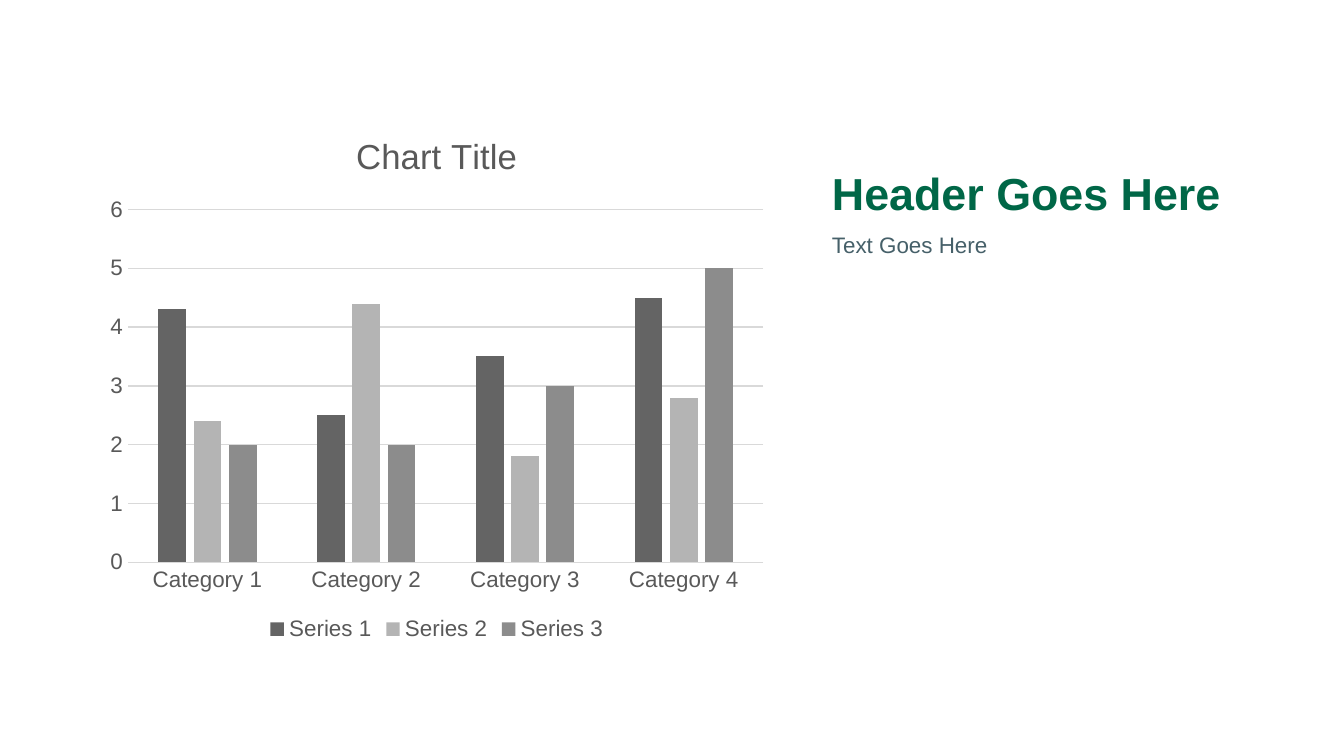
import pptx
import pptx.chart.data
import pptx.dml.color
import pptx.enum.chart
import pptx.enum.text
import pptx.oxml
import pptx.util

HEADER = "Header Goes Here"
BODY = "Text Goes Here"
CHART_TITLE = "Chart Title"
CATEGORIES = ["Category 1", "Category 2", "Category 3", "Category 4"]
SERIES = [
    ("Series 1", (4.3, 2.5, 3.5, 4.5), "646464"),
    ("Series 2", (2.4, 4.4, 1.8, 2.8), "B4B4B4"),
    ("Series 3", (2, 2, 3, 5), "8C8C8C"),
]
GREEN, SLATE, LABEL, GRID = "006747", "466069", "595959", "D9D9D9"
SLIDE_WIDTH = 10
SLIDE_HEIGHT = SLIDE_WIDTH * 9 / 16
TOP, HEADER_HEIGHT, CONTENT_HEIGHT = 0.81, 0.88, 4
CHART_LEFT, CHART_WIDTH = 0.72, 5.06
COLUMN_LEFT, COLUMN_WIDTH = 6.09, 3.23


def paint(color_format, color):
    color_format.rgb = pptx.dml.color.RGBColor.from_string(color)


def style_font(font, size, color, bold=False):
    font.name = "Arial"
    font.size = pptx.util.Pt(size)
    font.bold = bold
    paint(font.color, color)


def style_line(line, color):
    line.width = pptx.util.Pt(0.75)
    line.fill.solid()
    paint(line.fill.fore_color, color)


def fill_placeholder(holder, text, top, height, anchor, size, color, bold=False, space=0):
    holder.left, holder.top = pptx.util.Inches(COLUMN_LEFT), pptx.util.Inches(top)
    holder.width, holder.height = pptx.util.Inches(COLUMN_WIDTH), pptx.util.Inches(height)
    frame = holder.text_frame
    frame.text = text
    frame.word_wrap = True
    frame.auto_size = pptx.enum.text.MSO_AUTO_SIZE.NONE
    frame.vertical_anchor = anchor
    paragraph = frame.paragraphs[0]
    paragraph.alignment = pptx.enum.text.PP_ALIGN.LEFT
    paragraph.line_spacing = 0.9
    paragraph.space_before = pptx.util.Pt(space)
    style_font(paragraph.runs[0].font, size, color, bold)
    return paragraph


def remove_bullet(paragraph):
    properties = paragraph._p.get_or_add_pPr()
    properties.set("marL", "0")
    properties.set("indent", "0")
    properties.append(pptx.oxml.parse_xml(
        '<a:buNone xmlns:a="http://schemas.openxmlformats.org/drawingml/2006/main"/>'))


def add_column_chart(slide):
    data = pptx.chart.data.CategoryChartData()
    data.categories = CATEGORIES
    for name, values, _ in SERIES:
        data.add_series(name, values)
    chart = slide.shapes.add_chart(
        pptx.enum.chart.XL_CHART_TYPE.COLUMN_CLUSTERED,
        pptx.util.Inches(CHART_LEFT), pptx.util.Inches(TOP),
        pptx.util.Inches(CHART_WIDTH), pptx.util.Inches(CONTENT_HEIGHT),
        data).chart
    style_font(chart.font, 10, "000000")

    chart.has_title = True
    chart.chart_title.include_in_layout = False
    chart.chart_title.text_frame.text = CHART_TITLE
    style_font(chart.chart_title.text_frame.paragraphs[0].runs[0].font, 18.6, LABEL)

    chart.has_legend = True
    chart.legend.position = pptx.enum.chart.XL_LEGEND_POSITION.BOTTOM
    chart.legend.include_in_layout = False
    style_font(chart.legend.font, 12, LABEL)

    for axis in (chart.category_axis, chart.value_axis):
        axis.major_tick_mark = pptx.enum.chart.XL_TICK_MARK.NONE
        axis.minor_tick_mark = pptx.enum.chart.XL_TICK_MARK.NONE
        style_font(axis.tick_labels.font, 12, LABEL)
    style_line(chart.category_axis.format.line, GRID)
    chart.value_axis.format.line.fill.background()
    chart.value_axis.has_major_gridlines = True
    style_line(chart.value_axis.major_gridlines.format.line, GRID)

    plot = chart.plots[0]
    plot.gap_width, plot.overlap = 219, -27
    plot.vary_by_categories = False
    for series, (_, _, color) in zip(plot.series, SERIES):
        series.format.fill.solid()
        paint(series.format.fill.fore_color, color)


def main():
    presentation = pptx.Presentation()
    presentation.slide_width = pptx.util.Inches(SLIDE_WIDTH)
    presentation.slide_height = pptx.util.Inches(SLIDE_HEIGHT)
    slide = presentation.slides.add_slide(presentation.slide_layouts[1])
    anchors = pptx.enum.text.MSO_ANCHOR
    fill_placeholder(slide.shapes.title, HEADER, TOP, HEADER_HEIGHT,
                     anchors.BOTTOM, 24, GREEN, bold=True)
    body = fill_placeholder(slide.placeholders[1], BODY, TOP + HEADER_HEIGHT,
                            CONTENT_HEIGHT - HEADER_HEIGHT, anchors.TOP, 12, SLATE, space=7.5)
    remove_bullet(body)
    add_column_chart(slide)
    presentation.save("out.pptx")


if __name__ == "__main__":
    main()
